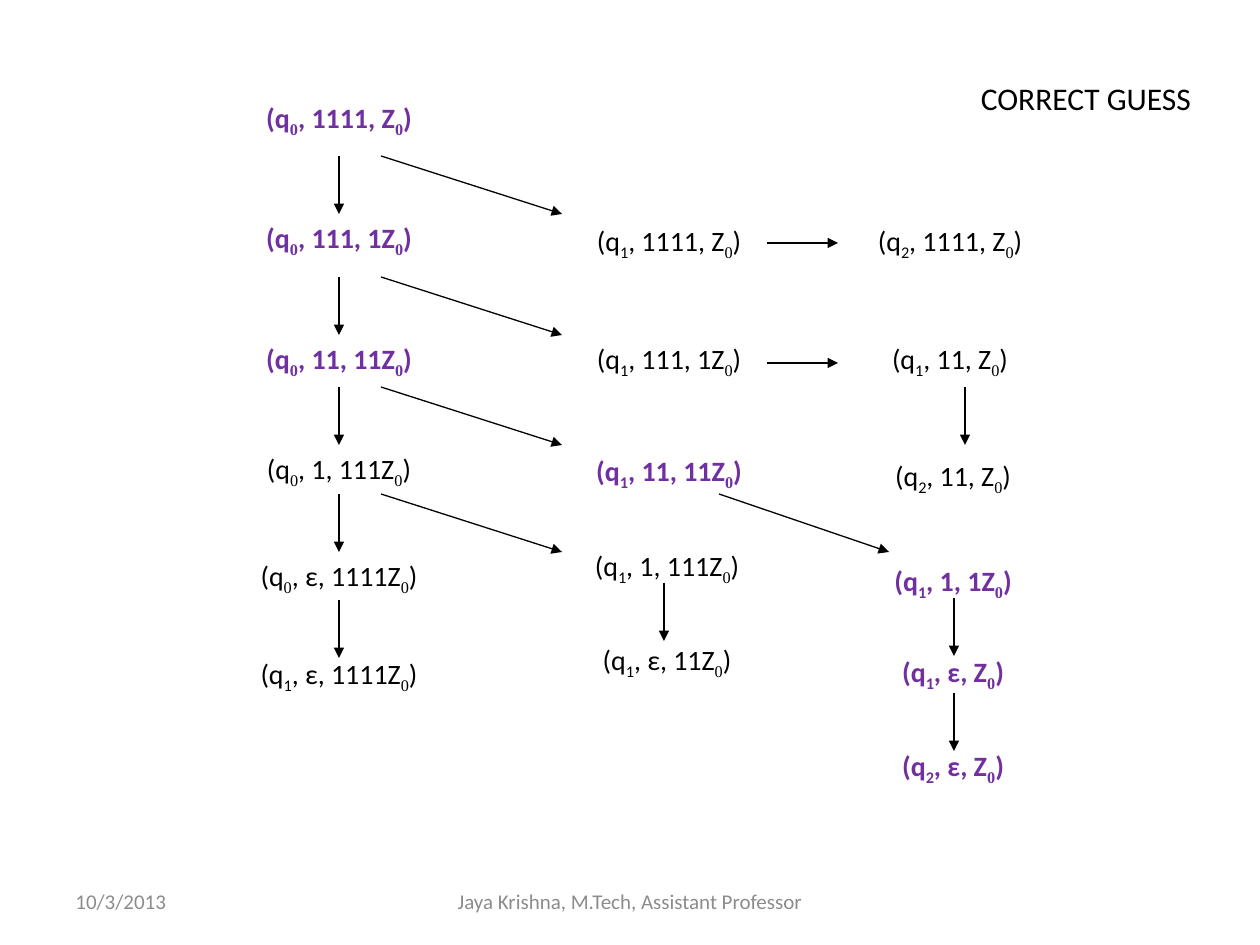
import dataclasses
import pptx
import pptx.util
import pptx.dml.color
import pptx.enum.shapes
import pptx.enum.text
import pptx.oxml.ns
import lxml.etree

PX = 914400 / 126
ALIGN = pptx.enum.text.PP_ALIGN
ANCHOR = pptx.enum.text.MSO_ANCHOR


@dataclasses.dataclass
class Theme:
    font: str = "Calibri"
    zero: str = "Times New Roman"
    ink: str = "000000"
    path_ink: str = "7030A0"
    gray: str = "8C8C8C"
    paper: str = "FFFFFF"
    head: int = 18
    body: int = 16
    foot: int = 12
    line: float = 0.75


theme = Theme()
NODE_W, NODE_H = 194, 45
DROP, SLANT, SIDE = 58, 181, 71

STEMS = [
    (0, "0", "1111", "Z", True),
    (120, "0", "111", "1Z", True),
    (241, "0", "11", "11Z", True),
    (351, "0", "1", "111Z", False),
    (458, "0", "ε", "1111Z", False),
    (556, "1", "ε", "1111Z", False),
]
LEAVES = [
    (330, 123, "1", "1111", "Z", False),
    (330, 241, "1", "111", "1Z", False),
    (330, 353, "1", "11", "11Z", True),
    (328, 448, "1", "1", "111Z", False),
    (328, 542, "1", "ε", "11Z", False),
    (611, 123, "2", "1111", "Z", False),
    (611, 241, "1", "11", "Z", False),
    (614, 358, "2", "11", "Z", False),
    (614, 463, "1", "1", "1Z", True),
    (614, 554, "1", "ε", "Z", True),
    (614, 648, "2", "ε", "Z", True),
]
STARTS = [62, 183, 293, 400]
ARROWS = [
    (97, 506, 0, DROP),
    (525, 149, SIDE, 0),
    (525, 269, SIDE, 0),
    (723, 293, 0, DROP),
    (477, 400, 170, DROP),
    (712, 504, 0, DROP),
    (712, 599, 0, DROP),
    (422, 489, 0, DROP),
]


def px(*sizes):
    return [round(size * PX) for size in sizes]


def color(code):
    return pptx.dml.color.RGBColor.from_string(code)


def style(run, size, ink, font=theme.font, bold=False):
    run.font.size = pptx.util.Pt(size)
    run.font.name = font
    run.font.bold = bold
    run.font.color.rgb = color(ink)


def label(slide, box, text, size, ink, align, anchor):
    frame = slide.shapes.add_textbox(*px(*box)).text_frame
    frame.word_wrap = True
    frame.vertical_anchor = anchor
    frame.text = text
    para = frame.paragraphs[0]
    para.alignment = align
    style(para.runs[0], size, ink)


def node(slide, left, top, state, tape, stack, good):
    shape = slide.shapes.add_shape(
        pptx.enum.shapes.MSO_SHAPE.RECTANGLE, *px(left, top, NODE_W, NODE_H))
    shape.shadow.inherit = False
    shape.fill.solid()
    shape.fill.fore_color.rgb = color(theme.paper)
    shape.line.fill.background()
    frame = shape.text_frame
    frame.word_wrap = True
    frame.vertical_anchor = ANCHOR.TOP
    para = frame.paragraphs[0]
    para.alignment = ALIGN.CENTER
    para.space_after = pptx.util.Pt(10)
    ink = theme.path_ink if good else theme.ink
    parts = ["(q", state, f", {tape}, {stack}", "0", ")"]
    for index, part in enumerate(parts):
        run = para.add_run()
        run.text = part
        font = theme.zero if part == "0" else theme.font
        style(run, theme.body, ink, font, good)
        if index in (1, 3):
            run.font._element.set("baseline", "-25000")
    return shape


def arrow(slide, left, top, wide, high):
    line = slide.shapes.add_connector(
        pptx.enum.shapes.MSO_CONNECTOR.STRAIGHT,
        *px(left, top, left + wide, top + high))
    line.line.color.rgb = color(theme.ink)
    line.line.width = pptx.util.Pt(theme.line)
    tag = pptx.oxml.ns.qn
    tail = lxml.etree.SubElement(line.line._get_or_add_ln(), tag("a:tailEnd"))
    tail.set("type", "triangle")
    lxml.etree.SubElement(line._element.spPr, tag("a:effectLst"))
    return line


def tree(slide, box):
    left, top = box[:2]
    stems = [node(slide, left, top + y, *rest) for y, *rest in STEMS]
    for x, y, *rest in LEAVES:
        node(slide, left + x, top + y, *rest)
    for y, stem in zip(STARTS, stems[1:]):
        down = arrow(slide, left + NODE_W // 2, top + y, 0, DROP)
        down.end_connect(stem, 0)
        arrow(slide, left + 139, top + y, SLANT, DROP)
    for x, y, wide, high in ARROWS:
        arrow(slide, left + x, top + y, wide, high)


def header(slide, box):
    label(slide, box, "CORRECT GUESS", theme.head, theme.ink,
          ALIGN.CENTER, ANCHOR.TOP)


def footer(slide, box):
    left, top, wide, high = box
    label(slide, (left, top, 294, high), "10/3/2013", theme.foot,
          theme.gray, ALIGN.LEFT, ANCHOR.MIDDLE)
    label(slide, (left + (wide - 400) // 2, top, 400, high),
          "Jaya Krishna, M.Tech, Assistant Professor", theme.foot,
          theme.gray, ALIGN.CENTER, ANCHOR.MIDDLE)


def main():
    deck = pptx.Presentation()
    deck.slide_width, deck.slide_height = px(1260, 945)
    slide = deck.slides.add_slide(deck.slide_layouts[6])
    footer(slide, (63, 876, 1134, 50))
    tree(slide, (242, 94, 808, 693))
    header(slide, (955, 73, 262, 50))
    deck.save("out.pptx")


if __name__ == "__main__":
    main()
